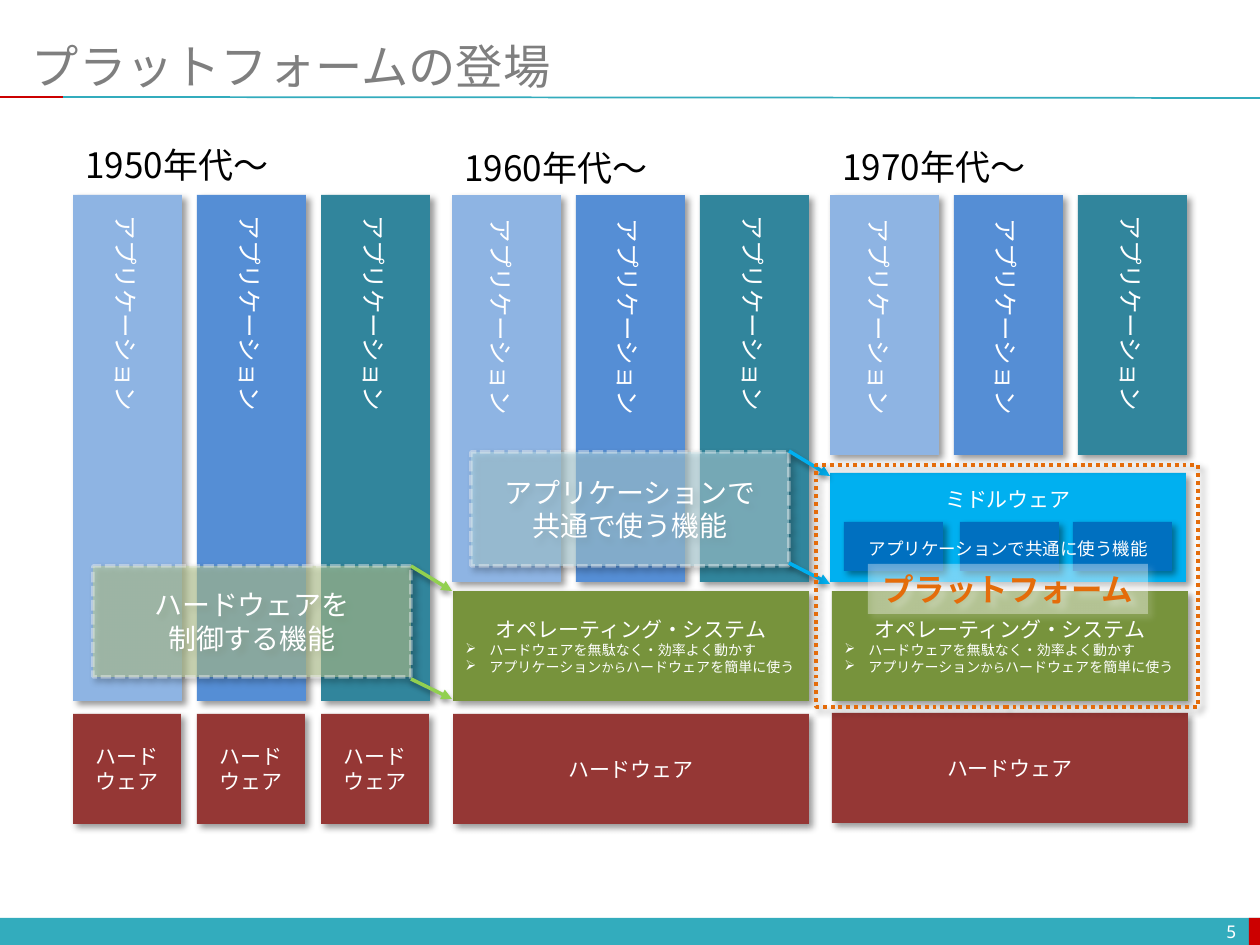
from dataclasses import dataclass

from lxml import etree
from pptx import Presentation
from pptx import util as u
from pptx.dml.color import RGBColor
from pptx.enum import dml, shapes, text
from pptx.oxml.ns import qn


@dataclass(frozen=True)
class Theme:
    """Colours, fonts and type sizes of the slide."""
    font: str = "Noto Sans CJK JP"
    mono: str = "Noto Sans Mono"
    teal: str = "33ACBD"
    red: str = "CC0000"
    grey: str = "7F7F7F"
    black: str = "000000"
    white: str = "FFFFFF"
    pale: str = "F2F2F2"
    apps: tuple = ("8EB4E3", "558ED5", "31859C")
    hard: str = "953735"
    green: str = "77933C"
    sky: str = "00B0F0"
    blue: str = "0070C0"
    mist: str = "B7DEE8"
    moss: str = "C3D69B"
    lime: str = "92D050"
    orange: str = "E46C0A"
    title: int = 27
    era: int = 20
    key: int = 18
    call: int = 16
    app: int = 14
    body: int = 12
    small: int = 10
    note: int = 8
    tiny: int = 7


T = Theme()
SCALE = 914400 / 126
TOP, COL, STEP, WIDE, BLOCK = 195, 109, 124, 356, 110
APP = "アプリケーション"
MID = text.MSO_ANCHOR.MIDDLE
LEFT, CENTER, RIGHT = text.PP_ALIGN.LEFT, text.PP_ALIGN.CENTER, text.PP_ALIGN.RIGHT


def px(*sizes):
    """Turn px lengths into EMU."""
    return [u.Emu(round(size * SCALE)) for size in sizes]


def rgb(tint):
    """Turn a hex string into a colour."""
    return RGBColor.from_string(tint)


def add(node, tag, **attrs):
    """Append a drawing element to a node."""
    return etree.SubElement(node, qn(tag), {k: str(v) for k, v in attrs.items()})


def shade(item, tint=T.black, alpha=40, blur=4, dist=3, angle=45):
    """Give a shape or connector an outer shadow."""
    props = item._element.spPr
    for old in props.findall(qn("a:effectLst")):
        props.remove(old)
    glow = add(add(props, "a:effectLst"), "a:outerShdw", blurRad=u.Pt(blur),
               dist=u.Pt(dist), dir=angle * 60000, algn="tl", rotWithShape=0)
    add(add(glow, "a:srgbClr", val=tint), "a:alpha", val=alpha * 1000)


def fade(fill, alpha):
    """Make a solid fill translucent."""
    add(fill.find(qn("a:srgbClr")), "a:alpha", val=alpha * 1000)


def style(run, size, tint, face=T.font, bold=False):
    """Format one run of text."""
    font = run.font
    font.size, font.bold, font.name = u.Pt(size), bold, face
    font.color.rgb = rgb(tint)
    add(run._r.get_or_add_rPr(), "a:ea", typeface=face)


def write(shape, words, size, tint=T.white, align=CENTER, wrap=True, **kind):
    """Set and format the text of a shape."""
    frame = shape.text_frame
    frame.text = words
    frame.word_wrap, frame.vertical_anchor = wrap, MID
    for para in frame.paragraphs:
        para.alignment = align
        for run in para.runs:
            style(run, size, tint, **kind)


def label(slide, box, words, size, tint=T.white, **kind):
    """Add a text box."""
    shape = slide.shapes.add_textbox(*px(*box))
    write(shape, words, size, tint, **kind)
    return shape


def rect(slide, box, tint=None, alpha=None, glow=T.black):
    """Add a rectangle with an optional fill and shadow."""
    shape = slide.shapes.add_shape(shapes.MSO_SHAPE.RECTANGLE, *px(*box))
    shape.shadow.inherit = False
    shape.line.fill.background()
    if tint:
        shape.fill.solid()
        shape.fill.fore_color.rgb = rgb(tint)
    else:
        shape.fill.background()
    if alpha:
        fade(shape._element.spPr.find(qn("a:solidFill")), alpha)
    if glow:
        shade(shape, glow)
    return shape


def edge(shape, tint, width, dash):
    """Give a shape a dashed outline."""
    shape.line.color.rgb = rgb(tint)
    shape.line.width, shape.line.dash_style = u.Pt(width), dash


def line(slide, ends, tint, width=1, arrow=False):
    """Add a straight line or an arrow."""
    link = slide.shapes.add_connector(shapes.MSO_CONNECTOR.STRAIGHT, *px(*ends))
    link.line.color.rgb, link.line.width = rgb(tint), u.Pt(width)
    if arrow:
        add(link._element.spPr.find(qn("a:ln")), "a:tailEnd", type="triangle")
        shade(link, alpha=38, blur=3.1, dist=1.6, angle=90)
    else:
        add(link._element.spPr, "a:effectLst")


def block(slide, box, words, tint=T.hard):
    """Add a filled block with centred text."""
    shape = rect(slide, box, tint)
    write(shape, words, T.body)
    return shape


def system(slide, left):
    """Add an operating system block with its two bullets."""
    shape = block(slide, (left, 591, WIDE, BLOCK), "オペレーティング・システム", T.green)
    notes = [[("ハードウェアを無駄なく・効率よく動かす", T.note)],
             [(APP, T.note), ("から", T.tiny), ("ハードウェアを簡単に使う", T.note)]]
    for note in notes:
        para = shape.text_frame.add_paragraph()
        para.alignment = LEFT
        props = para._p.get_or_add_pPr()
        props.set("marL", str(px(24)[0]))
        props.set("indent", str(px(-24)[0]))
        add(props, "a:buChar", char="➢")
        for words, size in note:
            run = para.add_run()
            run.text = words
            style(run, size, T.white)


def columns(slide, left, high, shifts):
    """Add the three application columns of an era."""
    for i, (tint, (dx, dy)) in enumerate(zip(T.apps, shifts)):
        x = left + i * STEP
        rect(slide, (x, TOP, COL, high), tint)
        name = label(slide, (x + dx - 58, 292 + dy, 223, 43), APP, T.app, wrap=False)
        name.rotation = 90


def callout(slide, box, words, tint):
    """Add a translucent dashed box."""
    shape = rect(slide, box, tint, 55)
    edge(shape, T.pale, 2, dml.MSO_LINE.SQUARE_DOT)
    stroke = shape._element.spPr.find(qn("a:ln"))
    stroke.find(qn("a:prstDash")).set("val", "sysDash")
    fade(stroke.find(qn("a:solidFill")), 43)
    write(shape, words, T.call)


def middle(slide, left):
    """Add the middleware block with its three shared functions."""
    rect(slide, (left, 473, WIDE, 109), T.sky)
    for x in (844, 960, 1073):
        rect(slide, (x, 522, 99, 49), T.blue)
    label(slide, (left, 532, WIDE, 34), "アプリケーションで共通に使う機能", T.small)
    label(slide, (left, 480, WIDE, 38), "ミドルウェア", T.body)


def base(slide):
    """Add the title, its rule and the footer."""
    rect(slide, (0, 918, 1260, 27), T.teal, glow=None)
    rect(slide, (1249, 918, 11, 27), T.red, glow=None)
    line(slide, (63, 97, 1260, 98), T.teal)
    line(slide, (0, 97, 63, 97), T.red)
    title = label(slide, (32, 37, 1197, 58), "プラットフォームの登場", T.title, T.grey, align=LEFT)
    title.text_frame.margin_left = title.text_frame.margin_right = 0
    label(slide, (955, 916, 294, 30), "5", T.small, align=RIGHT, face=T.mono)


def main():
    """Build and save the slide."""
    deck = Presentation()
    deck.slide_width, deck.slide_height = px(1260, 945)
    slide = deck.slides.add_slide(deck.slide_layouts[6])
    base(slide)
    even, moved = [(0, 0)] * 3, [(-4, 3), (-1, 3), (0, 0)]
    eras = [("1950年代〜", 73, 137, 506, even), ("1960年代〜", 452, 140, 387, moved),
            ("1970年代〜", 830, 139, 260, moved)]
    for name, left, top, high, shifts in eras:
        columns(slide, left, high, shifts)
        label(slide, (left, top, 219, 55), name, T.era, T.black, align=LEFT, wrap=False)
    for i in range(3):
        block(slide, (73 + i * STEP, 714, 108, BLOCK), "ハード\nウェア")
    for left, top in ((453, 714), (832, 713)):
        system(slide, left)
        block(slide, (left, top, WIDE, BLOCK), "ハードウェア")
    middle(slide, 830)
    callout(slide, (471, 452, 318, 114), "アプリケーションで\n共通で使う機能", T.mist)
    callout(slide, (93, 566, 318, 111), "ハードウェアを\n制御する機能", T.moss)
    for ends, tint in (((411, 566, 452, 591), T.lime), ((411, 679, 452, 699), T.lime),
                       ((789, 451, 830, 476), T.sky), ((789, 563, 830, 584), T.sky)):
        line(slide, ends, tint, 2, arrow=True)
    edge(rect(slide, (816, 465, 382, 242)), T.orange, 2.25, dml.MSO_LINE.ROUND_DOT)
    key = rect(slide, (868, 564, 280, 50), T.white, 36, T.white)
    write(key, "プラットフォーム", T.key, T.orange, wrap=False, bold=True)
    deck.save("out.pptx")


if __name__ == "__main__":
    main()
